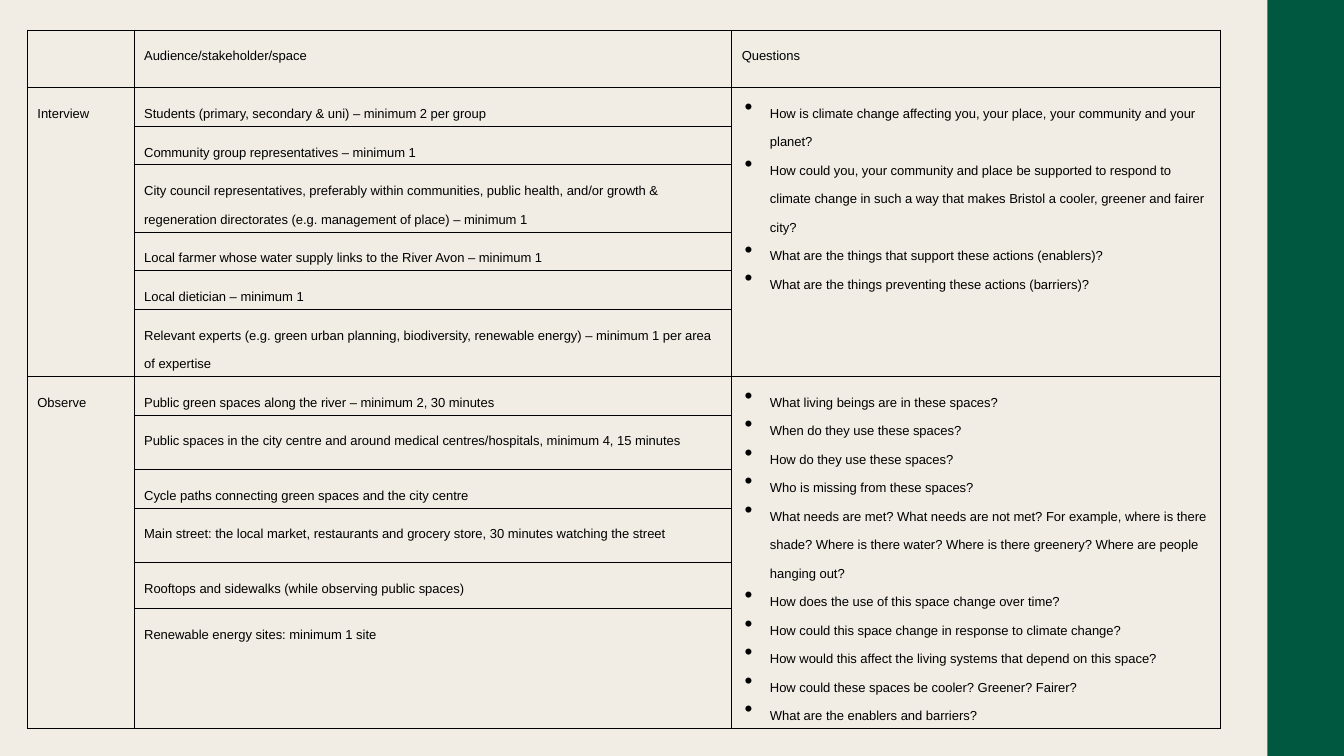
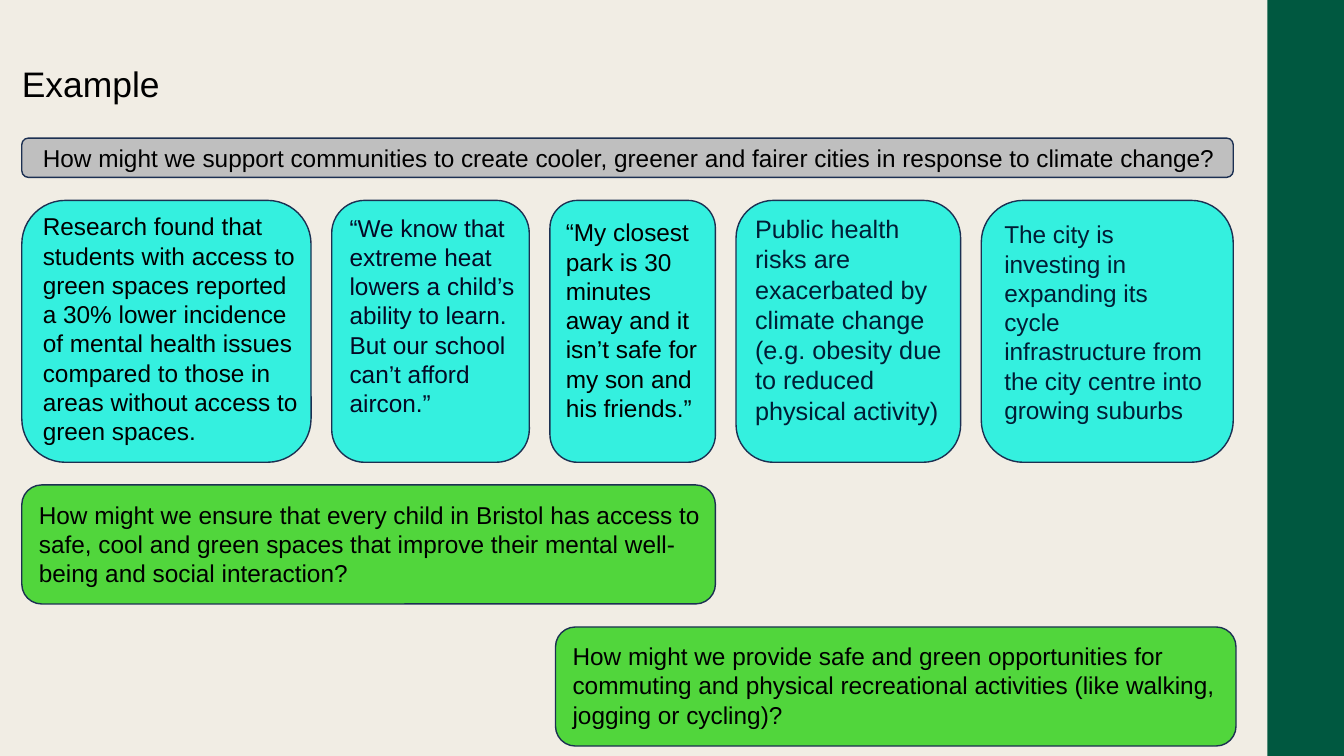
from lxml import etree
from pptx import Presentation
from pptx.dml.color import RGBColor
from pptx.enum.shapes import MSO_SHAPE
from pptx.enum.text import MSO_ANCHOR
from pptx.oxml.ns import qn
from pptx.util import Cm, Pt

RECTANGLE = MSO_SHAPE.RECTANGLE
ROUNDED = MSO_SHAPE.ROUNDED_RECTANGLE
TOP, MIDDLE = MSO_ANCHOR.TOP, MSO_ANCHOR.MIDDLE

FONT = "Arial"
CREAM, FOREST, OUTLINE = "F1EDE4", "005840", "1C3052"
GREY, TURQUOISE, GREEN = "BFBFBF", "34F0DF", "51D63C"
BLACK, INK, NAVY = "000000", "040824", "001D35"
BODY_SIZE = 17.4
SLIDE_WIDTH, SLIDE_HEIGHT, BAND_LEFT = 33.87, 19.05, 31.94
MARGIN = 0.55

TABLE_LEFT, TABLE_TOP = 0.69, 0.76
COLUMN_WIDTHS = [2.69, 15.06, 12.32]
ROW_HEIGHTS = [1.45, 0.95, 0.95, 1.65, 0.95, 0.95, 1.37,
               0.95, 1.37, 0.95, 1.38, 1.15, 2.62]
HEADINGS = ["", "Audience/stakeholder/space", "Questions"]
METHODS = [
    ("Interview",
     ["Students (primary, secondary & uni) – minimum 2 per group",
      "Community group representatives – minimum 1",
      "City council representatives, preferably within communities, public health, "
      "and/or growth & regeneration directorates (e.g. management of place) – minimum 1",
      "Local farmer whose water supply links to the River Avon – minimum 1",
      "Local dietician – minimum 1",
      "Relevant experts (e.g. green urban planning, biodiversity, renewable energy) – "
      "minimum 1 per area of expertise"],
     ["How is climate change affecting you, your place, your community and your planet?",
      "How could you, your community and place be supported to respond to climate change "
      "in such a way that makes Bristol a cooler, greener and fairer city?",
      "What are the things that support these actions (enablers)?",
      "What are the things preventing these actions (barriers)?"]),
    ("Observe",
     ["Public green spaces along the river – minimum 2, 30 minutes",
      "Public spaces in the city centre and around medical centres/hospitals, "
      "minimum 4, 15 minutes",
      "Cycle paths connecting green spaces and the city centre",
      "Main street: the local market, restaurants and grocery store, "
      "30 minutes watching the street",
      "Rooftops and sidewalks (while observing public spaces)",
      "Renewable energy sites: minimum 1 site"],
     ["What living beings are in these spaces?",
      "When do they use these spaces?",
      "How do they use these spaces?",
      "Who is missing from these spaces?",
      "What needs are met? What needs are not met? For example, where is there shade? "
      "Where is there water? Where is there greenery? Where are people hanging out?",
      "How does the use of this space change over time?",
      "How could this space change in response to climate change?",
      "How would this affect the living systems that depend on this space?",
      "How could these spaces be cooler? Greener? Fairer?",
      "What are the enablers and barriers?"]),
]

CARD_TOP, CARD_HEIGHT, CARD_GAP = 5.05, 6.6, 0.52
CARDS = [
    (7.29, (0.28, 0.15, 7.05), {},
     "Research found that students with access to green spaces reported a 30% lower "
     "incidence of mental health issues compared to those in areas without access to "
     "green spaces."),
    (4.98, (0.2, 0.18, 4.78), {"color": INK},
     "“We know that extreme heat lowers a child’s ability to learn. But our school "
     "can’t afford aircon.”"),
    (4.17, (0.15, 0.3, 3.95), {},
     "“My closest park is 30 minutes away and it isn’t safe for my son and his friends.”"),
    (5.66, (0.15, 0, 5.66), {"color": NAVY, "size": 18, "insets": (0.33, 0.33)},
     "Public health risks are exacerbated by climate change (e.g. obesity due to reduced "
     "physical activity)"),
    (6.35, (0.25, 0.15, 5.7), {"color": NAVY, "insets": (0.33, 0.33)},
     "The city is investing in expanding its cycle infrastructure from the city centre "
     "into growing suburbs"),
]
PANELS = [
    ((MARGIN, 3.48, 30.53, 0.99), GREY, (0.28, 0, 30.25),
     "How might we support communities to create cooler, greener and fairer cities in "
     "response to climate change?"),
    ((MARGIN, 12.22, 17.48, 3), GREEN, (0.18, 0.25, 17.5),
     "How might we ensure that every child in Bristol has access to safe, cool and green "
     "spaces that improve their mental well-being and social interaction?"),
    ((14, 15.8, 17.15, 3), GREEN, (0.18, 0.23, 16.9),
     "How might we provide safe and green opportunities for commuting and physical "
     "recreational activities (like walking, jogging or cycling)?"),
]


def rgb(value):
    """Turn a hex string into a colour."""
    return RGBColor.from_string(value)


def style_font(font, size, color):
    """Apply the shared typeface with a size and colour."""
    for name, value in {"name": FONT, "size": Pt(size), "bold": False}.items():
        setattr(font, name, value)
    font.color.rgb = rgb(color)


def add_element(parent, tag, **attributes):
    """Append a drawing element to its parent."""
    return etree.SubElement(parent, qn(tag), attributes)


def add_box(slide, kind, box, fill, line=None):
    """Draw a filled preset shape, outlined if a line colour is given."""
    shape = slide.shapes.add_shape(kind, *map(Cm, box))
    shape.shadow.inherit = False
    shape.fill.solid()
    shape.fill.fore_color.rgb = rgb(fill)
    if line:
        shape.line.color.rgb = rgb(line)
        shape.line.width = Pt(1)
    else:
        shape.line.fill.background()


def add_text(slide, box, text, size=BODY_SIZE, color=BLACK, insets=(0.25, 0.13),
             spacing=1.0, anchor=TOP):
    """Place one paragraph in a wrapping text box."""
    frame = slide.shapes.add_textbox(*map(Cm, box)).text_frame
    across, down = map(Cm, insets)
    settings = {"word_wrap": True, "vertical_anchor": anchor,
                "margin_left": across, "margin_right": across,
                "margin_top": down, "margin_bottom": down}
    for name, value in settings.items():
        setattr(frame, name, value)
    paragraph = frame.paragraphs[0]
    paragraph.line_spacing = spacing
    run = paragraph.add_run()
    run.text = text
    style_font(run.font, size, color)


def add_panel(slide, box, fill, text_place, text, **text_format):
    """Draw a rounded panel with its text at an offset inside it."""
    add_box(slide, ROUNDED, box, fill, OUTLINE)
    left, top, _, height = box
    right, down, width = text_place
    add_text(slide, (left + right, top + down, width, height - down), text, **text_format)


def add_slide(presentation):
    """Add a blank slide with the shared background and side band."""
    slide = presentation.slides.add_slide(presentation.slide_layouts[6])
    slide.background.fill.solid()
    slide.background.fill.fore_color.rgb = rgb(CREAM)
    add_box(slide, RECTANGLE,
            (BAND_LEFT, 0, SLIDE_WIDTH - BAND_LEFT, SLIDE_HEIGHT), FOREST)
    return slide


def add_bullet(paragraph):
    """Give a paragraph a hanging black bullet."""
    properties = paragraph._p.get_or_add_pPr()
    properties.set("marL", str(Cm(0.71)))
    properties.set("indent", str(Cm(-0.64)))
    add_element(add_element(properties, "a:buClr"), "a:srgbClr", val=BLACK)
    add_element(properties, "a:buFont", typeface=FONT)
    add_element(properties, "a:buChar", char="•")


def fill_cell(cell, texts, bullets=False):
    """Write lowered paragraphs into a table cell."""
    frame = cell.text_frame
    for index, text in enumerate(texts):
        paragraph = frame.add_paragraph() if index else frame.paragraphs[0]
        if bullets:
            add_bullet(paragraph)
        run = paragraph.add_run()
        run.text = text
        style_font(run.font, 16, BLACK)
        run._r.get_or_add_rPr().set("baseline", "-25000")


def outline_cell(cell):
    """Border a cell in black and leave it unfilled."""
    properties = cell._tc.get_or_add_tcPr()
    for side in ("a:lnL", "a:lnR", "a:lnT", "a:lnB"):
        line = add_element(properties, side, w=str(Pt(0.75)))
        add_element(add_element(line, "a:solidFill"), "a:srgbClr", val=BLACK)
    cell.fill.background()


def build_methods_slide(presentation):
    """Build the table of interviews and observations."""
    slide = add_slide(presentation)
    table = slide.shapes.add_table(
        len(ROW_HEIGHTS), len(COLUMN_WIDTHS), Cm(TABLE_LEFT), Cm(TABLE_TOP),
        Cm(sum(COLUMN_WIDTHS)), Cm(sum(ROW_HEIGHTS))).table
    table.first_row = table.horz_banding = False
    for column, width in zip(table.columns, COLUMN_WIDTHS):
        column.width = Cm(width)
    for row, height in zip(table.rows, ROW_HEIGHTS):
        row.height = Cm(height)
    for cell in table.iter_cells():
        outline_cell(cell)
    for column, heading in enumerate(HEADINGS):
        if heading:
            fill_cell(table.cell(0, column), [heading])
    first = 1
    for method, audiences, questions in METHODS:
        last = first + len(audiences) - 1
        for column in (0, 2):
            table.cell(first, column).merge(table.cell(last, column))
        fill_cell(table.cell(first, 0), [method])
        fill_cell(table.cell(first, 2), questions, bullets=True)
        for row, audience in enumerate(audiences, first):
            fill_cell(table.cell(row, 1), [audience])
        first = last + 1


def build_example_slide(presentation):
    """Build the example with its findings and questions."""
    slide = add_slide(presentation)
    add_text(slide, (MARGIN, 1.52, 28.78, 1.32), "Example", size=25.3,
             insets=(0, 0), spacing=0.9, anchor=MIDDLE)
    for box, fill, text_place, text in PANELS:
        add_panel(slide, box, fill, text_place, text)
    left = MARGIN
    for width, text_place, text_format, text in CARDS:
        add_panel(slide, (left, CARD_TOP, width, CARD_HEIGHT), TURQUOISE,
                  text_place, text, **text_format)
        left += width + CARD_GAP


def main():
    """Create and save the presentation."""
    presentation = Presentation()
    presentation.slide_width = Cm(SLIDE_WIDTH)
    presentation.slide_height = Cm(SLIDE_HEIGHT)
    build_methods_slide(presentation)
    build_example_slide(presentation)
    presentation.save("out.pptx")


if __name__ == "__main__":
    main()
